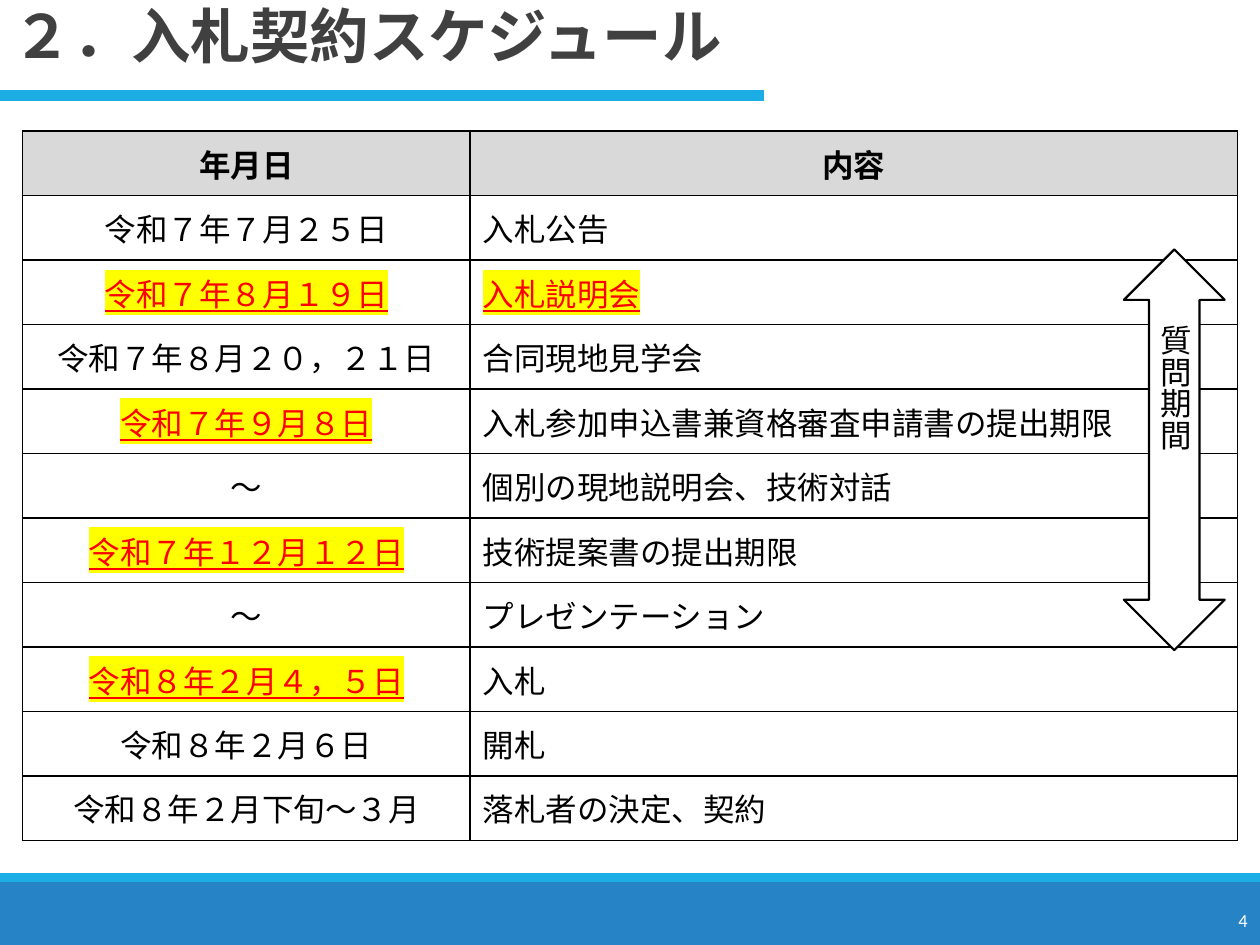
from lxml.etree import SubElement
from pptx import Presentation
from pptx.dml.color import RGBColor
from pptx.enum.shapes import MSO_CONNECTOR, MSO_SHAPE
from pptx.enum.text import MSO_ANCHOR as ANCHOR, MSO_AUTO_SIZE as AUTO, PP_ALIGN as ALIGN
from pptx.oxml.ns import qn
from pptx.util import Inches, Pt

# Content
TITLE = "２．入札契約スケジュール"
HEADER = ("年月日", "内容")
SCHEDULE = [  # date, event, number of highlighted cells from the left
    ("令和７年７月２５日", "入札公告", 0),
    ("令和７年８月１９日", "入札説明会", 2),
    ("令和７年８月２０，２１日", "合同現地見学会", 0),
    ("令和７年９月８日", "入札参加申込書兼資格審査申請書の提出期限", 1),
    ("～", "個別の現地説明会、技術対話", 0),
    ("令和７年１２月１２日", "技術提案書の提出期限", 1),
    ("～", "プレゼンテーション", 0),
    ("令和８年２月４，５日", "入札", 1),
    ("令和８年２月６日", "開札", 0),
    ("令和８年２月下旬～３月", "落札者の決定、契約", 0),
]
PERIOD = "質問期間"
PAGE = "4"

# Style
COLORS = {"blue": "2683C6", "cyan": "1CADE4", "title": "404040", "text": "000000",
          "white": "FFFFFF", "head": "D9D9D9", "alert": "FF0000", "marker": "FFFF00"}
JP, LATIN = "Noto Sans CJK JP", "Calibri"
W, H = 10, 7.5
FOOTER_TOP, STRIPE = 7, 0.07
COL_WIDTHS = (3.55, 6.09)
TABLE_TOP, TABLE_H = 1.04, 5.63


def rgb(name):
    return RGBColor.from_string(COLORS[name])


def box(*inches):
    return [Inches(v) for v in inches]


def write(tf, text, size=18, color="text", font=JP, bold=False, align=ALIGN.LEFT, marked=False):
    p = tf.paragraphs[0]
    p.alignment = align
    r = p.add_run()
    r.text = text
    f = r.font
    f.size, f.bold, f.name = Pt(size), bold, font
    f.color.rgb = rgb("alert" if marked else color)
    rPr = f._element
    SubElement(rPr, qn("a:ea")).set("typeface", font)
    if marked:
        f.underline = True
        highlight = SubElement(rPr, qn("a:highlight"))
        SubElement(highlight, qn("a:srgbClr")).set("val", COLORS["marker"])
        rPr.find(qn("a:latin")).addprevious(highlight)
    return p


def add_block(shapes, kind, at, fill, line=None, width=1.25):
    s = shapes.add_shape(kind, *box(*at))
    s.shadow.inherit = False
    s.fill.solid()
    s.fill.fore_color.rgb = rgb(fill)
    if line:
        s.line.color.rgb = rgb(line)
        s.line.width = Pt(width)
    else:
        s.line.fill.background()


def add_text(shapes, at):
    tf = shapes.add_textbox(*box(*at)).text_frame
    tf.word_wrap = True
    tf.vertical_anchor = ANCHOR.MIDDLE
    return tf


def fill_cell(cell, fill, text, **style):
    cell.vertical_anchor = ANCHOR.MIDDLE
    write(cell.text_frame, text, **style)
    tcPr = cell._tc.get_or_add_tcPr()
    for side in ("lnL", "lnR", "lnT", "lnB"):
        ln = SubElement(tcPr, qn(f"a:{side}"), w=str(Pt(1)))
        SubElement(SubElement(ln, qn("a:solidFill")), qn("a:srgbClr")).set("val", COLORS["text"])
    cell.fill.solid()
    cell.fill.fore_color.rgb = rgb(fill)


prs = Presentation()
prs.slide_width, prs.slide_height = box(W, H)
slide = prs.slides.add_slide(prs.slide_layouts[5])
shapes = slide.shapes

# Footer band and page number
add_block(shapes, MSO_SHAPE.RECTANGLE, (0, FOOTER_TOP, W, H - FOOTER_TOP), "blue")
add_block(shapes, MSO_SHAPE.RECTANGLE, (0, FOOTER_TOP - STRIPE, W, STRIPE), "cyan")
write(add_text(shapes, (8.92, 7.1, 1.08, 0.4)), PAGE, 10.5, "white", LATIN, align=ALIGN.RIGHT)

# Title and its rule
rule = shapes.add_connector(MSO_CONNECTOR.STRAIGHT, *box(0, 0.76, 6.06, 0.76))
rule.line.color.rgb = rgb("cyan")
rule.line.width = Pt(6)
SubElement(rule._element.spPr, qn("a:effectLst"))
title = shapes.title
title.left, title.top, title.width, title.height = box(0, 0.01, 8.62, 0.67)
tf = title.text_frame
tf.vertical_anchor, tf.auto_size, tf.word_wrap = ANCHOR.TOP, AUTO.NONE, True
write(tf, TITLE, 34, "title", bold=True).line_spacing = 0.9

# Schedule table
n_rows = len(SCHEDULE) + 1
table = shapes.add_table(n_rows, 2, *box(0.18, TABLE_TOP, sum(COL_WIDTHS), TABLE_H)).table
for col, width in zip(table.columns, COL_WIDTHS):
    col.width = Inches(width)
for row in table.rows:
    row.height = Inches(TABLE_H / n_rows)
for c, text in enumerate(HEADER):
    fill_cell(table.cell(0, c), "head", text, bold=True, align=ALIGN.CENTER)
for i, (date, event, marks) in enumerate(SCHEDULE, 1):
    fill_cell(table.cell(i, 0), "white", date, align=ALIGN.CENTER, marked=marks > 0)
    fill_cell(table.cell(i, 1), "white", event, marked=marks > 1)

# Question period arrow with vertical label
group = shapes.add_group_shape().shapes
add_block(group, MSO_SHAPE.UP_DOWN_ARROW, (8.92, 1.98, 0.8, 3.18), "white", "text")
tf = add_text(group, (9.08, 2.48, 0.5, 2.02))
tf._txBody.bodyPr.set("vert", "eaVert")
write(tf, PERIOD)

prs.save("out.pptx")
